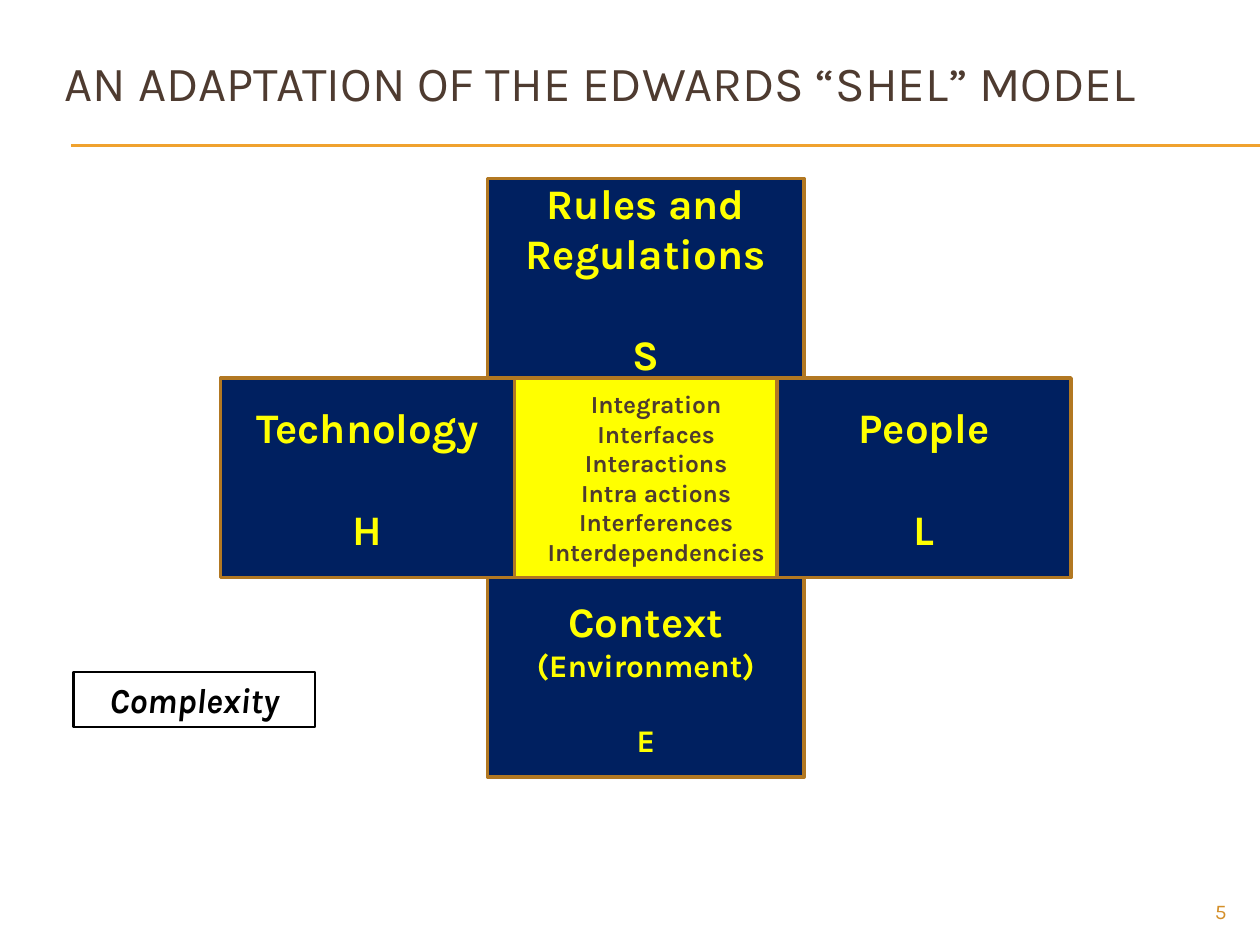
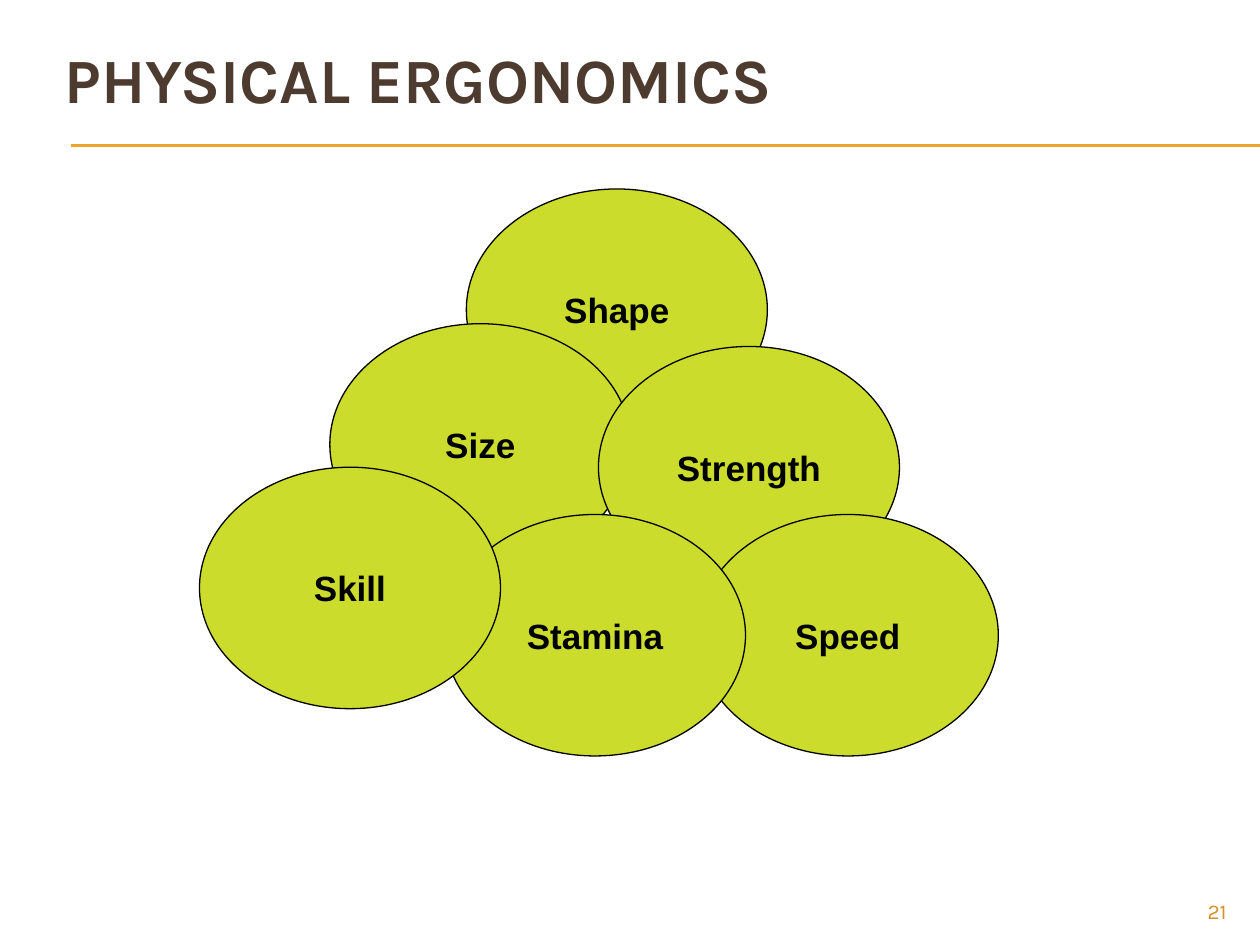
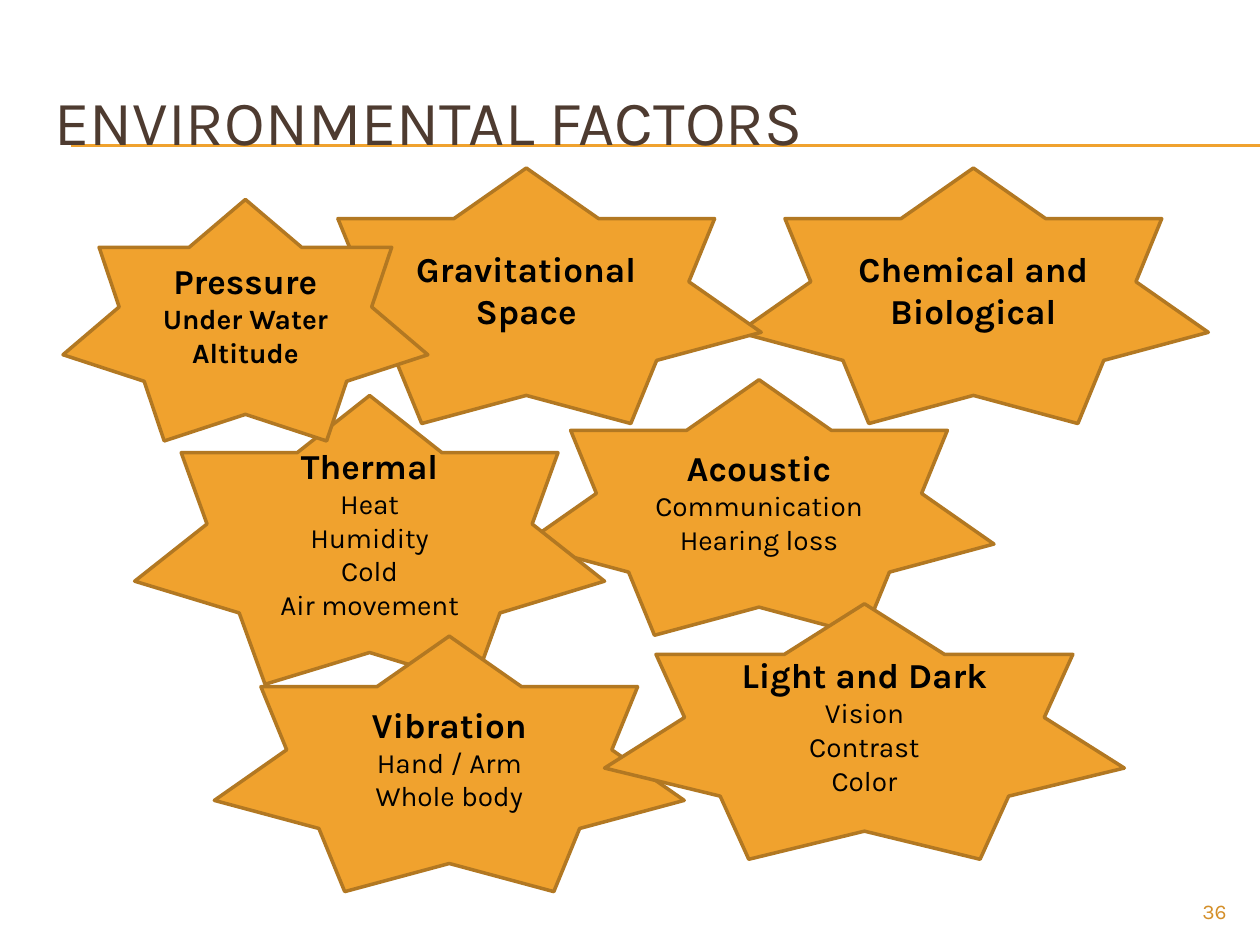
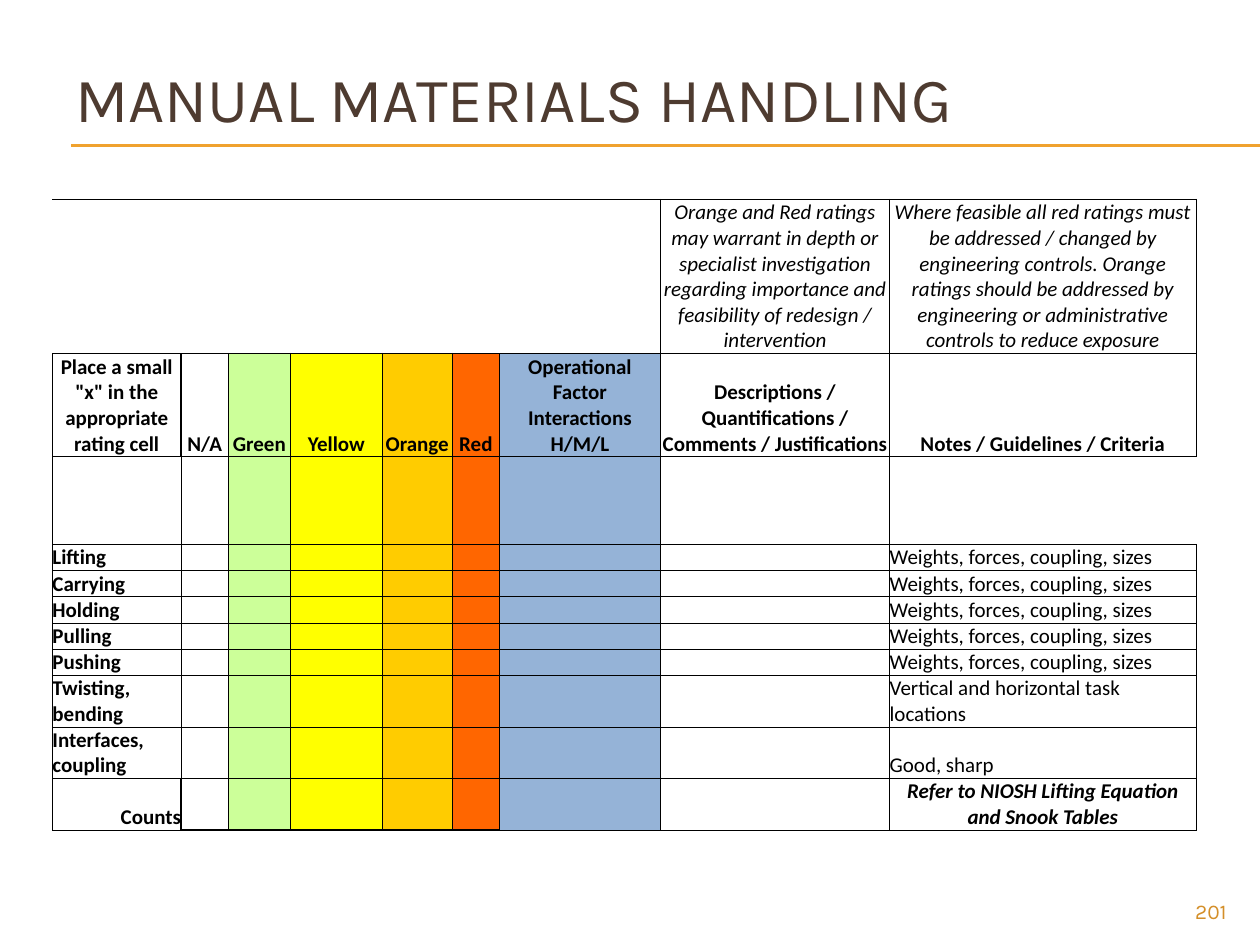
from lxml import etree
from pptx import Presentation
from pptx.dml.color import RGBColor as Rgb
from pptx.enum.shapes import MSO_CONNECTOR as Conn, MSO_SHAPE as Geo
from pptx.enum.text import MSO_ANCHOR as Anchor, PP_ALIGN as Align
from pptx.oxml.ns import qn
from pptx.util import Pt

INK = {
    "title": "4E3B30", "rule": "F0A22E", "edge": "B27822", "page": "D48F29",
    "navy": "002060", "lemon": "FFFF00", "lime": "CBDC2C", "black": "000000",
    "green": "CCFF99", "orange": "FFCC00", "red": "FF6600", "blue": "95B3D7",
}
FACE = "Karla"


def rgb(name):
    return Rgb.from_string(INK[name])


def style(para, size, ink, bold=False, italic=False, face=FACE, align=Align.CENTER):
    para.alignment = align
    font = para.font
    font.name, font.size = face, Pt(size)
    font.bold, font.italic = bold, italic
    font.color.rgb = rgb(ink)


def write(frame, lines, ink, italic=False, face=FACE, align=Align.CENTER):
    """Fill a frame; each line is text, size, bold and an optional gap above."""
    for i, (text, size, bold, *gap) in enumerate(lines):
        para = frame.add_paragraph() if i else frame.paragraphs[0]
        para.text = text
        style(para, size, ink, bold, italic, face, align)
        if gap:
            para.space_before = Pt(gap[0])


def label(slide, box, line, ink, align, anchor):
    frame = slide.shapes.add_textbox(*map(Pt, box)).text_frame
    frame.word_wrap = True
    frame.vertical_anchor = anchor
    write(frame, [line], ink, align=align)


def block(slide, geo, box, fill, edge, width):
    """Add a preset shape and return its text frame."""
    shape = slide.shapes.add_shape(geo, *map(Pt, box))
    shape.shadow.inherit = False
    if fill:
        shape.fill.solid()
        shape.fill.fore_color.rgb = rgb(fill)
    else:
        shape.fill.background()
    shape.line.color.rgb = rgb(edge)
    shape.line.width = Pt(width)
    frame = shape.text_frame
    frame.word_wrap = True
    frame.vertical_anchor = Anchor.MIDDLE
    return frame


def start(deck, title, box, number, size=36, bold=False):
    """Add a slide with the double rule, title and page number."""
    slide = deck.slides.add_slide(deck.slide_layouts[6])
    for y in (82.8, 83.5):
        line = slide.shapes.add_connector(Conn.STRAIGHT, Pt(40.5), Pt(y), Pt(720), Pt(y))
        line.line.color.rgb = rgb("rule")
        line.line.width = Pt(0.75)
        etree.SubElement(line._element.spPr, qn("a:effectLst"))
    label(slide, box, (title, size, bold), "title", Align.LEFT, Anchor.MIDDLE)
    label(slide, (648, 510, 60, 19.5), (number, 12, False), "page",
          Align.RIGHT, Anchor.TOP)
    return slide


def cross(slide, x, y, width, height):
    """Draw four arms around a centre; the rows share the height equally."""
    row = height / 3
    arm, stem, core = 168, 181, 156
    mid = x + (width - stem) / 2
    hub = block(slide, Geo.RECTANGLE, (x + arm, y + row, core, row), "lemon", "edge", 2)
    hub.margin_left = Pt(13)
    words = ("Integration", "Interfaces", "Interactions",
             "Intra actions Interferences", "Interdependencies")
    write(hub, [(word, 14, True) for word in words], "title")
    arms = (
        (mid, y, stem, [("Rules and Regulations", 24, True), ("S", 24, True, 29)]),
        (x, y + row, arm, [("Technology", 24, True), ("H", 24, True, 29)]),
        (x + width - arm, y + row, arm, [("People", 24, True), ("L", 24, True, 29)]),
        (mid, y + 2 * row, stem, [("Context", 24, True), ("(Environment)", 18, True),
                                  ("E", 18, True, 21)]),
    )
    for left, top, wide, lines in arms:
        frame = block(slide, Geo.RECTANGLE, (left, top, wide, row), "navy", "edge", 2)
        write(frame, lines, "lemon")


def model(deck):
    slide = start(deck, "AN ADAPTATION OF THE EDWARDS “SHEL” MODEL",
                  (30, 17, 648, 60), "5", 28)
    cross(slide, 126, 102, 486, 342)
    frame = block(slide, Geo.RECTANGLE, (42, 384, 138, 31.5), None, "black", 1.5)
    frame.vertical_anchor = Anchor.TOP
    write(frame, [("Complexity", 20, True)], "black", italic=True)


def ovals(slide, x, y):
    spots = (("Shape", 152.5, 0), ("Size", 74.5, 77), ("Strength", 228, 90),
             ("Speed", 284.5, 186), ("Stamina", 140, 186), ("Skill", 0, 159))
    for word, dx, dy in spots:
        frame = block(slide, Geo.OVAL, (x + dx, y + dy, 172, 138), "lime", "black", 0.75)
        frame.word_wrap = False
        write(frame, [(word, 20, True)], "black", face="Arial")


def body(deck):
    slide = start(deck, "PHYSICAL ERGONOMICS", (30, 12, 576, 66), "21", bold=True)
    ovals(slide, 114, 108)


def stars(slide, x, y):
    """Each star: offset, size, heads, details, whether details are bold."""
    wide, tall = 268.5, 146
    spots = (
        (263.5, 121, wide, tall, ["Acoustic"], ["Communication", "Hearing loss"], False),
        (41, 130, wide, 165, ["Thermal"],
         ["Heat", "Humidity", "Cold", "Air movement"], False),
        (86.5, 267.5, wide, tall, ["Vibration"], ["Hand / Arm", "Whole body"], False),
        (309.5, 249, 297, tall, ["Light and Dark"],
         ["Vision", "Contrast", "Color"], False),
        (386, 0, wide, tall, ["Chemical and Biological"], [], False),
        (130.5, 0, wide, tall, ["Gravitational", "Space"], [], False),
        (0, 18, 208.5, 138, ["Pressure"], ["Under Water", "Altitude"], True),
    )
    for dx, dy, width, height, heads, notes, bold in spots:
        frame = block(slide, Geo.STAR_7_POINT, (x + dx, y + dy, width, height),
                      "rule", "edge", 2)
        lines = [(head, 20, True) for head in heads]
        write(frame, lines + [(note, 16, bold) for note in notes], "black")


def factors(deck):
    slide = start(deck, "ENVIRONMENTAL FACTORS", (24, 36, 684, 66), "36")
    stars(slide, 36, 96)


def edges(row, col):
    """Border widths of a cell; the rating cells of rows 1 and 10 are framed."""
    thick = dict(L=0.5, R=0.5, T=0.5, B=0.5)
    framed = row in (1, 10)
    rated = 1 <= col <= 5
    if row == 0 or rated and (framed or row == 2):
        thick["T"] = 1
    if rated and (framed or row == 9):
        thick["B"] = 1
    if framed and col in (0, 5):
        thick["R"] = 1
    if framed and col in (1, 6):
        thick["L"] = 1
    if row == 0 and col < 7:
        thick["L"] = 0
    if (row, col) == (2, 8):
        thick["R"] = 0
    return thick


def border(cell, thick):
    props = cell._tc.get_or_add_tcPr()
    for i, (side, width) in enumerate(thick.items()):
        line = etree.Element(qn(f"a:ln{side}"), w=str(int(Pt(width))))
        if width:
            fill = etree.SubElement(line, qn("a:solidFill"))
            etree.SubElement(fill, qn("a:srgbClr"), val=INK["black"])
        else:
            etree.SubElement(line, qn("a:noFill"))
        props.insert(i, line)


def look(row, col):
    """Return bold, italic and alignment of a cell."""
    if row == 0:
        return False, True, Align.CENTER
    if row == 1:
        return True, False, Align.CENTER
    if row == 10:
        return True, col == 8, Align.CENTER if col else Align.RIGHT
    return col == 0, False, Align.LEFT


def grid(slide, x, y):
    cols = (73.5, 27, 35.5, 52.5, 40, 27, 92, 131, 175)
    rows = (88, 59, 50, *[15] * 5, *[29.5] * 3)
    fills = {2: "green", 3: "lemon", 4: "orange", 5: "red", 6: "blue"}
    loads = "Weights, forces, coupling, sizes"
    tasks = [(name, loads) for name in
             ("Lifting", "Carrying", "Holding", "Pulling", "Pushing")]
    tasks += [("Twisting, bending", "Vertical and horizontal task locations"),
              ("Interfaces, coupling", "Good, sharp"),
              ("Counts", "Refer to NIOSH Lifting Equation and Snook Tables")]
    heads = ('Place a small "x" in the appropriate rating cell', "N/A", "Green",
             "Yellow", "Orange", "Red", "Operational Factor Interactions H/M/L",
             "Descriptions / Quantifications / Comments / Justifications",
             "Notes / Guidelines / Criteria")
    words = {(1, col): head for col, head in enumerate(heads)}
    words[0, 7] = ("Orange and Red ratings may warrant in depth or specialist "
                   "investigation regarding importance and feasibility of "
                   "redesign / intervention")
    words[0, 8] = ("Where feasible all red ratings must be addressed / changed by "
                   "engineering controls. Orange ratings should be addressed by "
                   "engineering or administrative controls to reduce exposure")
    for row, (name, note) in enumerate(tasks, 3):
        words[row, 0], words[row, 8] = name, note

    table = slide.shapes.add_table(len(rows), len(cols), Pt(x), Pt(y),
                                   Pt(sum(cols)), Pt(sum(rows))).table
    table.first_row = table.horz_banding = False
    for col, width in zip(table.columns, cols):
        col.width = Pt(width)
    for r, height in enumerate(rows):
        table.rows[r].height = Pt(height)
        for c in range(len(cols)):
            cell = table.cell(r, c)
            cell.margin_left = cell.margin_right = 0
            cell.margin_top = cell.margin_bottom = 0
            cell.vertical_anchor = Anchor.BOTTOM
            if r and c in fills:
                cell.fill.solid()
                cell.fill.fore_color.rgb = rgb(fills[c])
            else:
                cell.fill.background()
            border(cell, edges(r, c))
            para = cell.text_frame.paragraphs[0]
            bold, italic, align = look(r, c)
            if (r, c) in words:
                para.text = words[r, c]
            else:
                etree.SubElement(para._p, qn("a:endParaRPr"), sz="1200")
            style(para, 12, "black", bold, italic, "Calibri", align)
    table.cell(0, 0).merge(table.cell(0, 6))


def lifting(deck):
    slide = start(deck, "MANUAL MATERIALS HANDLING", (36, 21.5, 648, 68.5), "201")
    grid(slide, 30, 114)


def main():
    deck = Presentation()
    deck.slide_width, deck.slide_height = Pt(720), Pt(540)
    for build in (model, body, factors, lifting):
        build(deck)
    deck.save("out.pptx")


if __name__ == "__main__":
    main()
